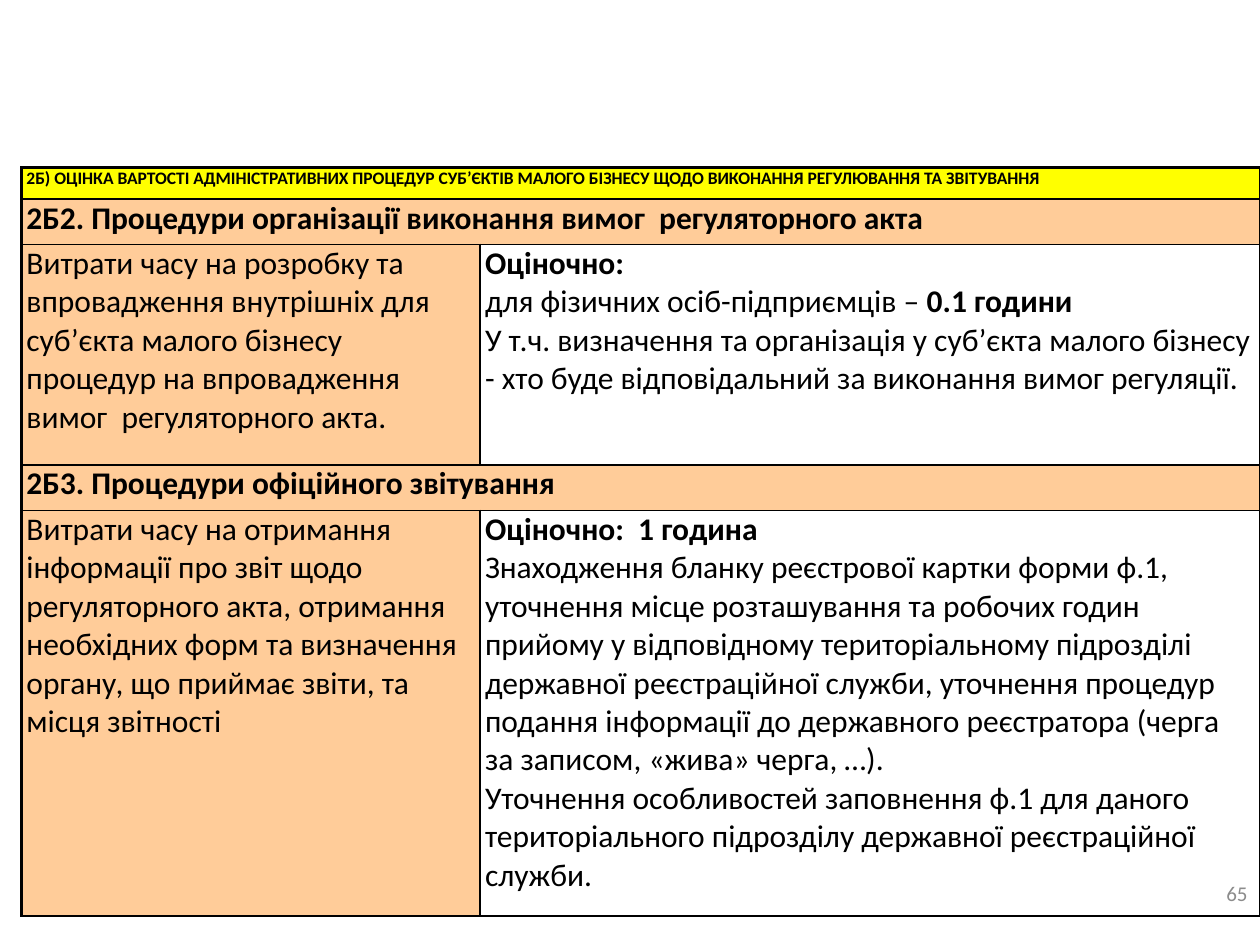
"""Build a slide with a table of administrative procedure costs for small businesses."""
from lxml import etree
from pptx import Presentation
from pptx.dml.color import RGBColor
from pptx.enum.text import MSO_ANCHOR, PP_ALIGN
from pptx.oxml.ns import qn
from pptx.util import Inches, Pt

RIGHT, MIDDLE = PP_ALIGN.RIGHT, MSO_ANCHOR.MIDDLE
FONT = "Calibri"
COLORS = {"text": "000000", "border": "000000", "number": "8C8C8C",
          "heading": "FFFF00", "label": "FFCC99"}
SLIDE_NUMBER = "65"
COLUMNS = [3.64, 6.19]
ROW_HEIGHTS = [0.25, 0.36, 1.75, 0.36, 3.22]
LEFT, TOP = 0.17, 1.33
THICK, THIN = 1.5, 1
HEADING_SIZE, BODY_SIZE = 10, 18

# Each cell is a list of paragraphs; each paragraph is a list of (text, bold) runs.
ROWS = [
    [[[("2Б) ОЦІНКА ВАРТОСТІ АДМІНІСТРАТИВНИХ ПРОЦЕДУР СУБ’ЄКТІВ МАЛОГО БІЗНЕСУ "
        "ЩОДО ВИКОНАННЯ РЕГУЛЮВАННЯ ТА ЗВІТУВАННЯ", True)]]],
    [[[("2Б2. Процедури організації виконання вимог  регуляторного акта", True)]]],
    [[[("Витрати часу на розробку та впровадження внутрішніх для суб’єкта малого "
        "бізнесу процедур на впровадження вимог  регуляторного акта.", False)]],
     [[("Оціночно:", True)],
      [("для фізичних осіб-підприємців – ", False), ("0.1 години", True)],
      [("У т.ч. визначення та організація у суб’єкта малого бізнесу - хто буде "
        "відповідальний за виконання вимог регуляції.", False)]]],
    [[[("2Б3. Процедури офіційного звітування", True)]]],
    [[[("Витрати часу на отримання інформації про звіт щодо  регуляторного акта, "
        "отримання необхідних форм та визначення органу, що приймає звіти, та "
        "місця звітності", False)]],
     [[("Оціночно:  1 година", True)],
      [("Знаходження бланку реєстрової картки форми ф.1, уточнення місце "
        "розташування та робочих годин прийому у відповідному територіальному "
        "підрозділі державної реєстраційної служби, уточнення процедур подання "
        "інформації до державного реєстратора (черга за записом, «жива» черга, …).",
        False)],
      [("Уточнення особливостей заповнення ф.1 для даного територіального "
        "підрозділу державної реєстраційної служби.", False)]]],
]


def style_run(run, size, color, bold=False):
    run.font.name = FONT
    run.font.size = Pt(size)
    run.font.bold = bold
    run.font.color.rgb = RGBColor.from_string(COLORS[color])


def set_borders(cell, widths):
    properties = cell._tc.get_or_add_tcPr()
    for side in "LRTB":
        line = etree.SubElement(properties, qn(f"a:ln{side}"), w=str(Pt(widths[side])))
        fill = etree.SubElement(line, qn("a:solidFill"))
        etree.SubElement(fill, qn("a:srgbClr"), val=COLORS["border"])


def fill_cell(cell, paragraphs, size):
    cell.margin_left = cell.margin_right = Inches(0.04)
    cell.margin_top = cell.margin_bottom = 0
    frame = cell.text_frame
    for index, runs in enumerate(paragraphs):
        paragraph = frame.add_paragraph() if index else frame.paragraphs[0]
        for text, bold in runs:
            run = paragraph.add_run()
            run.text = text
            style_run(run, size, "text", bold)


def add_number(slide):
    box = slide.shapes.add_textbox(Inches(7.67), Inches(6.83), Inches(2.33), Inches(0.52))
    frame = box.text_frame
    frame.word_wrap = True
    frame.vertical_anchor = MIDDLE
    frame.text = SLIDE_NUMBER
    frame.paragraphs[0].alignment = RIGHT
    style_run(frame.paragraphs[0].runs[0], 12, "number")


def add_procedures(slide):
    table = slide.shapes.add_table(
        len(ROWS), len(COLUMNS), Inches(LEFT), Inches(TOP),
        Inches(sum(COLUMNS)), Inches(sum(ROW_HEIGHTS))).table
    table.first_row = table.horz_banding = False
    for column, width in zip(table.columns, COLUMNS):
        column.width = Inches(width)
    last = len(COLUMNS) - 1
    for r, (contents, height) in enumerate(zip(ROWS, ROW_HEIGHTS)):
        table.rows[r].height = Inches(height)
        merged = len(contents) == 1
        if merged:
            table.cell(r, 0).merge(table.cell(r, last))
        for c in range(len(COLUMNS)):
            cell = table.cell(r, c)
            set_borders(cell, {"L": THIN if c else THICK,
                               "R": THICK if merged or c == last else THIN,
                               "T": THIN if r else THICK, "B": THIN})
            if c and not merged:
                cell.fill.background()
            else:
                cell.fill.solid()
                cell.fill.fore_color.rgb = RGBColor.from_string(
                    COLORS["label" if r else "heading"])
        for c, paragraphs in enumerate(contents):
            fill_cell(table.cell(r, c), paragraphs, BODY_SIZE if r else HEADING_SIZE)


def main():
    deck = Presentation()
    deck.slide_width, deck.slide_height = Inches(10), Inches(7.5)
    slide = deck.slides.add_slide(deck.slide_layouts[6])
    add_number(slide)
    add_procedures(slide)
    deck.save("out.pptx")


if __name__ == "__main__":
    main()
